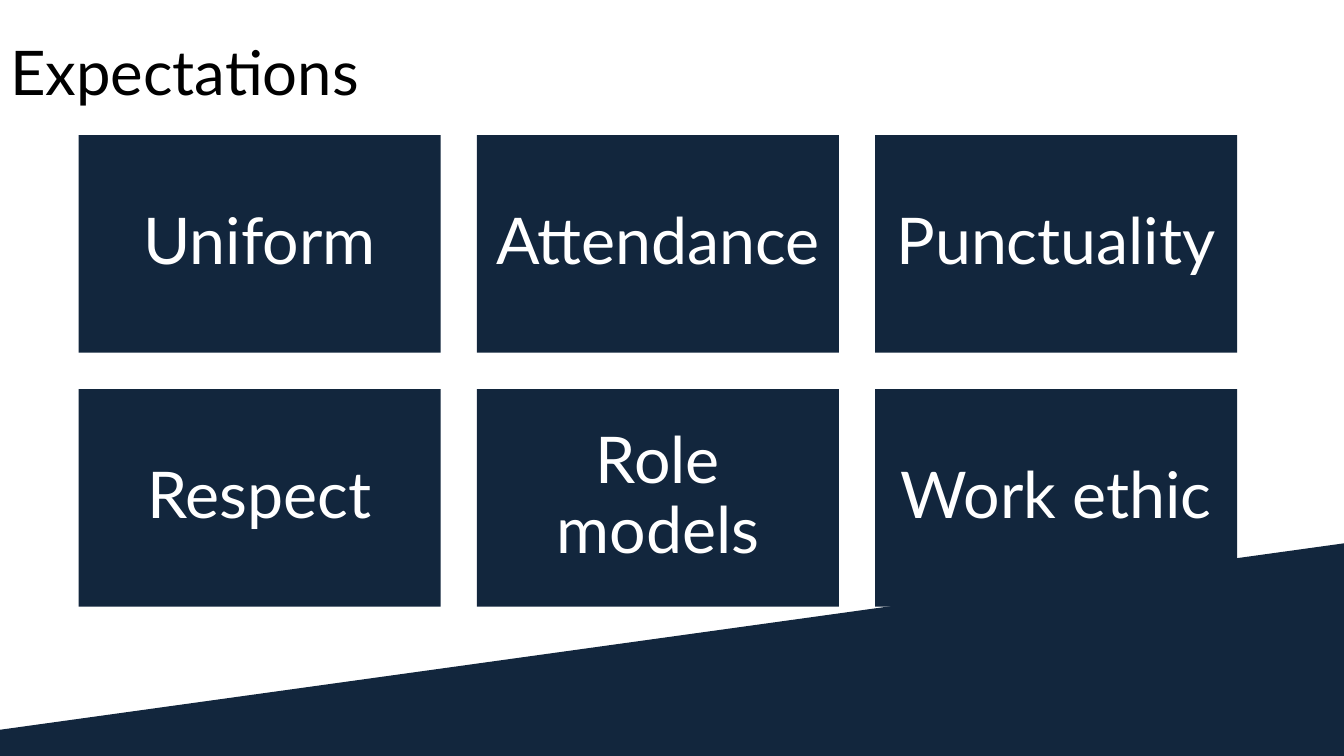
from pptx import Presentation
from pptx.dml.color import RGBColor
from pptx.enum.shapes import MSO_SHAPE
from pptx.enum.text import MSO_ANCHOR, MSO_AUTO_SIZE, PP_ALIGN
from pptx.util import Inches, Pt

RECT = MSO_SHAPE.RECTANGLE
MIDDLE = MSO_ANCHOR.MIDDLE
NO_FIT = MSO_AUTO_SIZE.NONE
LEFT, CENTER = PP_ALIGN.LEFT, PP_ALIGN.CENTER

SLIDE_W, SLIDE_H = 13.33, 7.5
FONT = "Lato"
NAVY, WHITE, BLACK = "12263D", "FFFFFF", "000000"

# Card grid, in inches
GRID_LEFT, GRID_TOP = 0.78, 1.34
CARD_W, CARD_H, GAP = 3.59, 2.16, 0.36
CARD_INSET = 0.18

EXPECTATIONS = [
    ["Uniform", "Attendance", "Punctuality"],
    ["Respect", "Role models", "Work ethic"],
]


def rgb(color):
    return RGBColor.from_string(color)


def paint(sp, color):
    sp.shadow.inherit = False
    sp.fill.solid()
    sp.fill.fore_color.rgb = rgb(color)
    sp.line.fill.background()


def write(sp, text, size, color, align=LEFT, inset=None):
    tf = sp.text_frame
    tf.word_wrap = True
    tf.auto_size = NO_FIT
    tf.vertical_anchor = MIDDLE
    if inset is not None:
        tf.margin_left = tf.margin_right = Inches(inset)
        tf.margin_top = tf.margin_bottom = Inches(inset)
    p = tf.paragraphs[0]
    p.alignment = align
    p.line_spacing = 0.9
    r = p.add_run()
    r.text = text
    r.font.name = FONT
    r.font.size = Pt(size)
    r.font.color.rgb = rgb(color)


def add_wedge(s):
    points = [(0, 7.24), (SLIDE_W, 5.39), (SLIDE_W, SLIDE_H), (0, SLIDE_H)]
    corners = [(Inches(x), Inches(y)) for x, y in points]
    outline = s.shapes.build_freeform(*corners[0])
    outline.add_line_segments(corners[1:], close=True)
    paint(outline.convert_to_shape(), NAVY)


def add_title(s, text):
    sp = s.shapes.title
    sp.left, sp.top = Inches(0), Inches(0.02)
    sp.width, sp.height = Inches(11.5), Inches(1.45)
    write(sp, text, 44, BLACK)


def add_card(s, row, col, text):
    left = GRID_LEFT + col * (CARD_W + GAP)
    top = GRID_TOP + row * (CARD_H + GAP)
    sp = s.shapes.add_shape(RECT, Inches(left), Inches(top),
                            Inches(CARD_W), Inches(CARD_H))
    paint(sp, NAVY)
    write(sp, text, 46, WHITE, align=CENTER, inset=CARD_INSET)


def main():
    prs = Presentation()
    prs.slide_width, prs.slide_height = Inches(SLIDE_W), Inches(SLIDE_H)
    s = prs.slides.add_slide(prs.slide_layouts[5])

    # Background wedge and heading
    add_wedge(s)
    add_title(s, "Expectations")

    # Grid of expectations
    for row, labels in enumerate(EXPECTATIONS):
        for col, text in enumerate(labels):
            add_card(s, row, col, text)

    prs.save("out.pptx")


if __name__ == "__main__":
    main()
